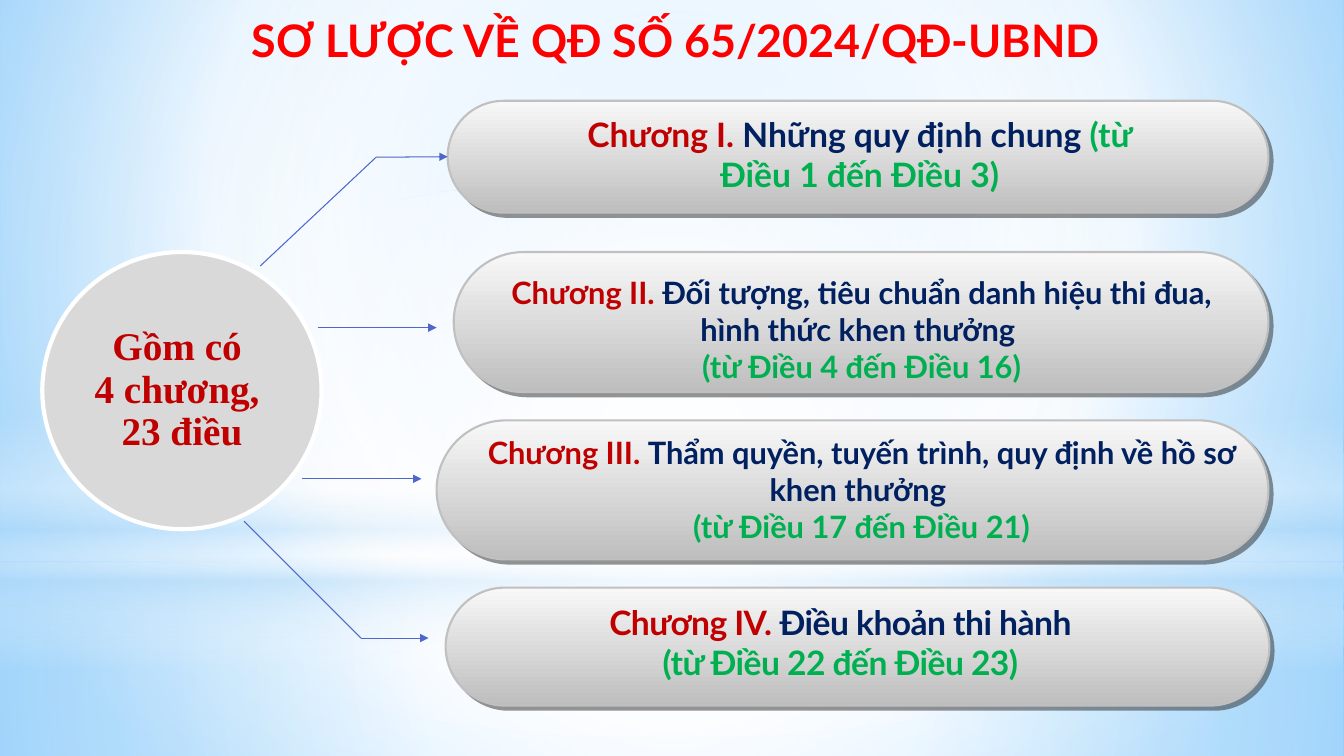
from dataclasses import dataclass

import pptx
import pptx.dml.color
import pptx.enum.shapes
import pptx.enum.text
import pptx.oxml
import pptx.oxml.ns
import pptx.util
from lxml import etree

Inches = pptx.util.Inches
Pt = pptx.util.Pt
qn = pptx.oxml.ns.qn
Shape = pptx.enum.shapes.MSO_SHAPE
Anchor = pptx.enum.text.MSO_ANCHOR


@dataclass(frozen=True)
class Theme:
    font: str = "Lato"
    circle_font: str = "Times New Roman"
    title_size: int = 32
    circle_size: int = 28
    large: int = 24
    medium: int = 22
    red: str = "FF0000"
    chapter: str = "C00000"
    topic: str = "002060"
    articles: str = "00B050"
    circle: str = "D9D9D9"
    white: str = "FFFFFF"
    pill_line: str = "C0C0C0"
    pill_stops: tuple = ((0, "F8F8F8", 100), (100, "BEBEBE", 100))
    shadow: str = "292929"
    arrow: str = "4E67C8"


def rgb(value):
    return pptx.dml.color.RGBColor.from_string(value)


def add(parent, tag, **attributes):
    """Append a DrawingML child with the given attributes."""
    child = etree.SubElement(parent, qn(tag))
    for name, value in attributes.items():
        child.set(name, str(value))
    return child


def paint_gradient(holder, stops, angle=None, focus=(50, 50, 50, 50)):
    """Swap a solid fill for a linear gradient, or a circular one if no angle is given."""
    gradient = pptx.oxml.parse_xml(
        f'<a:gradFill {pptx.oxml.ns.nsdecls("a")} rotWithShape="1"/>')
    stop_list = add(gradient, "a:gsLst")
    for position, color, opacity in stops:
        stop = add(stop_list, "a:gs", pos=position * 1000)
        add(add(stop, "a:srgbClr", val=color), "a:alpha", val=opacity * 1000)
    if angle is None:
        circle = add(gradient, "a:path", path="circle")
        sides = dict(zip("ltrb", (side * 1000 for side in focus)))
        add(circle, "a:fillToRect", **sides)
    else:
        add(gradient, "a:lin", ang=angle * 60000, scaled=0)
    holder.replace(holder.find(qn("a:solidFill")), gradient)


class Page:
    def __init__(self, deck, theme):
        self.theme = theme
        self.layout = deck.slide_layouts[5]
        self.slide = deck.slides.add_slide(self.layout)

    def background(self, stops, focus):
        self.slide.background.fill.solid()
        paint_gradient(self.slide.element.find(".//" + qn("p:bgPr")), stops, focus=focus)

    def shape(self, kind, place, fill, line=None, width=0):
        shape = self.slide.shapes.add_shape(kind, *map(Inches, place))
        shape.shadow.inherit = False
        shape.fill.solid()
        shape.fill.fore_color.rgb = rgb(fill)
        if line:
            shape.line.color.rgb = rgb(line)
            shape.line.width = Pt(width)
        else:
            shape.line.fill.background()
        return shape

    def glow(self, kind, place, stops, angle=None):
        """Add a translucent layer to the layout, behind everything on the slide."""
        layer = self.shape(kind, place, self.theme.white)
        paint_gradient(layer.element.spPr, stops, angle)
        self.layout.shapes.element.append(layer.element)

    def style(self, para, size, color=None, font=None):
        para.alignment = pptx.enum.text.PP_ALIGN.CENTER
        para.font.name = font or self.theme.font
        para.font.size = Pt(size)
        para.font.bold = True
        if color:
            para.font.color.rgb = rgb(color)

    def title(self, text, place):
        box = self.slide.shapes.title
        box.left, box.top, box.width, box.height = map(Inches, place)
        frame = box.text_frame
        frame.text = text
        frame.auto_size = pptx.enum.text.MSO_AUTO_SIZE.NONE
        frame.vertical_anchor = Anchor.TOP
        self.style(frame.paragraphs[0], self.theme.title_size, self.theme.red)

    def circle(self, text, place):
        theme = self.theme
        frame = self.shape(Shape.OVAL, place, theme.circle, theme.white, 3).text_frame
        frame.margin_left = frame.margin_right = frame.margin_top = frame.margin_bottom = 0
        frame.vertical_anchor = Anchor.MIDDLE
        para = frame.paragraphs[0]
        para.text = text
        para.line_spacing = 0.9
        self.style(para, theme.circle_size, theme.chapter, theme.circle_font)

    def pill(self, place):
        theme = self.theme
        pill = self.shape(Shape.ROUNDED_RECTANGLE, place, theme.white, theme.pill_line, 1.5)
        pill.adjustments[0] = 0.5
        properties = pill.element.spPr
        paint_gradient(properties, theme.pill_stops, angle=90)
        shadow = add(properties.find(qn("a:effectLst")), "a:outerShdw", blurRad=0,
                     dist=Pt(4.2), dir=45 * 60000, algn="ctr", rotWithShape=0)
        add(add(shadow, "a:srgbClr", val=theme.shadow), "a:alpha", val=50000)
        return pill

    def label(self, place, size, lines, spacing=0):
        """Write lines of (colour, text) spans; spacing is in hundredths of a point."""
        frame = self.slide.shapes.add_textbox(*map(Inches, place)).text_frame
        frame.word_wrap = True
        for number, line in enumerate(lines):
            para = frame.add_paragraph() if number else frame.paragraphs[0]
            self.style(para, size)
            for color, text in line:
                span = para.add_run()
                span.text = text
                span.font.color.rgb = rgb(color)
                if spacing:
                    span.font._element.set("spc", str(spacing))

    def route(self, points, target=None):
        """Draw straight segments through the points, with an arrowhead on the last."""
        for start, end in zip(points, points[1:]):
            line = self.slide.shapes.add_connector(
                pptx.enum.shapes.MSO_CONNECTOR.STRAIGHT, *map(Inches, start + end))
            line.line.color.rgb = rgb(self.theme.arrow)
            line.line.width = Pt(0.75)
            add(line.element.spPr, "a:effectLst")
        add(line.line._get_or_add_ln(), "a:tailEnd", type="triangle")
        if target:
            line.end_connect(target, 1)


def main():
    deck = pptx.Presentation()
    deck.slide_width, deck.slide_height = Inches(13.33), Inches(7.5)
    theme = Theme()
    page = Page(deck, theme)
    white, sky = theme.white, "B4DCFA"

    page.background([(0, "9ED5FF", 100), (60, white, 100), (100, "5BB9FF", 100)],
                    (20, 10, 20, 60))
    page.glow(Shape.RECTANGLE, (0, 5.58, 13.33, 1.92),
              [(0, white, 91), (37, white, 76), (100, sky, 79)])
    page.glow(Shape.RECTANGLE, (0, 0, 13.33, 5.58),
              [(0, white, 89), (48, white, 62), (100, sky, 79)])
    page.glow(Shape.RECTANGLE, (0, 4.12, 13.33, 2.5),
              [(0, white, 0), (29, white, 30), (45, sky, 40),
               (55, white, 26), (65, sky, 60), (100, white, 0)], angle=90)
    page.glow(Shape.OVAL, (0, 1.75, 13.33, 5.58), [(0, white, 100), (56, white, 0)])

    page.title("SƠ LƯỢC VỀ QĐ SỐ 65/2024/QĐ-UBND", (1.74, 0.08, 9.93, 0.64))
    page.circle("Gồm có \v4 chương, \v23 điều", (0.42, 2.5, 2.77, 2.75))

    chapter, topic, articles = theme.chapter, theme.topic, theme.articles
    chapters = [
        ((4.44, 1, 8.14, 1.11), (5.55, 1.08, 5.95, 0.91), theme.large,
         [[(chapter, "Chương I."), (topic, " Những quy định chung "),
           (articles, "(từ Điều 1 đến Điều 3)")]], 0),
        ((4.5, 2.5, 8.08, 1.39), (4.67, 2.67, 7.75, 1.21), theme.medium,
         [[(chapter, "Chương II. "),
           (topic, "Đối tượng, tiêu chuẩn danh hiệu thi đua, hình thức khen thưởng ")],
          [(articles, "(từ Điều 4 đến Điều 16)")]], 0),
        ((4.33, 4.17, 8.25, 1.38), (4.67, 4.25, 7.75, 1.21), theme.medium,
         [[(chapter, "Chương III. "),
           (topic, "Thẩm quyền, tuyến trình, quy định về hồ sơ khen thưởng ")],
          [(articles, "(từ Điều 17 đến Điều 21)")]], 0),
        ((4.42, 5.83, 8.17, 1.17), (4.5, 5.92, 7.67, 0.91), theme.large,
         [[(chapter, "Chương IV. "), (topic, "Điều khoản thi hành")],
          [(articles, "(từ Điều 22 đến Điều 23)")]], -40),
    ]
    pills = []
    for pill_place, label_place, size, lines, spacing in chapters:
        pills.append(page.pill(pill_place))
        page.label(label_place, size, lines, spacing)

    page.route([(2.58, 2.64), (3.73, 1.56), (4.44, 1.56)], pills[0])
    page.route([(3.15, 3.25), (4.33, 3.25)])
    page.route([(3, 4.75), (4.18, 4.75)])
    page.route([(2.42, 5.17), (3.58, 6.33), (4.25, 6.33)])
    deck.save("out.pptx")


if __name__ == "__main__":
    main()
